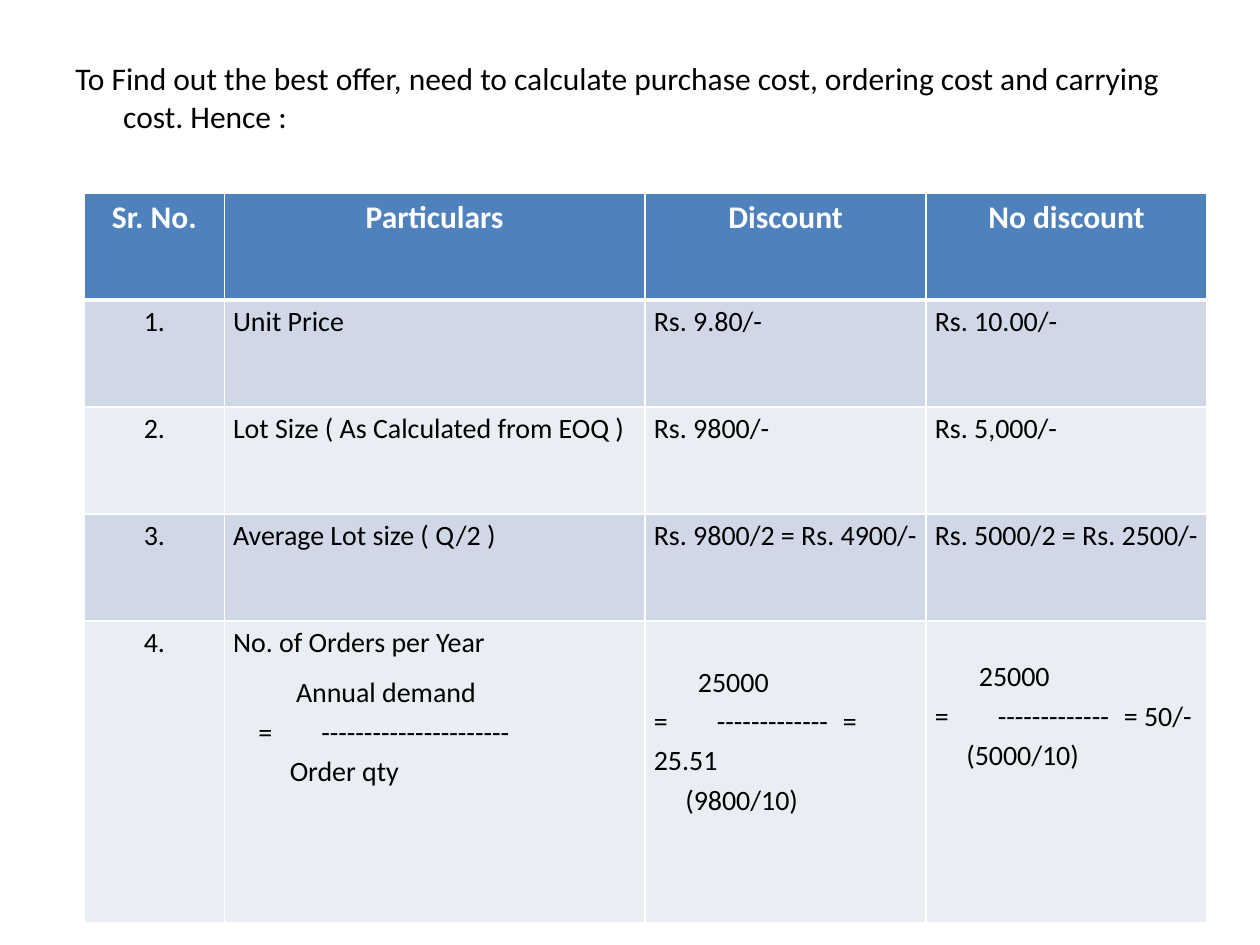
from typing import Any, NamedTuple

from lxml import etree
from pptx import Presentation
from pptx import util as u
from pptx.dml.color import RGBColor
from pptx.enum import text
from pptx.oxml import ns

COLORS = {
    "header": "4F81BD",
    "odd": "D0D8E8",
    "even": "E9EDF4",
    "light": "FFFFFF",
    "dark": "000000",
}
LEFT, CENTER = text.PP_ALIGN.LEFT, text.PP_ALIGN.CENTER
COL_WIDTHS = (1.11, 3.34, 2.23, 2.23)
ROW_HEIGHTS = (0.85, 0.85, 0.85, 0.85, 2.39)


class Line(NamedTuple):
    text: str
    indent: float = 0
    tabs: tuple[float, ...] = ()
    after: float = 0


class Entry(NamedTuple):
    lines: tuple[Line, ...]
    top: float = 0


def single(words: str) -> Entry:
    return Entry((Line(words),))


def orders(divisor: str, result: str, top: float) -> Entry:
    """Number of orders as a fraction over three lines."""
    return Entry((
        Line("25000", 0.35),
        Line(f"=\t-------------\t= {result}", 0, (0.21, 1.34)),
        Line(f"({divisor}/10)", 0.25),
    ), top)


HEADER = ("Sr. No.", "Particulars", "Discount", "No discount")
PRICES = (
    ("1.", "Unit Price", "Rs. 9.80/-", "Rs. 10.00/-"),
    ("2.", "Lot Size ( As Calculated from EOQ )", "Rs. 9800/-", "Rs. 5,000/-"),
    ("3.", "Average Lot size ( Q/2 )", "Rs. 9800/2 = Rs. 4900/-",
     "Rs. 5000/2 = Rs. 2500/-"),
)
ORDERS = (
    single("4."),
    Entry((
        Line("No. of Orders per Year", after=6),
        Line("Annual demand", 0.5),
        Line("=\t----------------------", 0.2, (0.41,)),
        Line("Order qty", 0.45),
    )),
    orders("9800", "25.51", 0.31),
    orders("5000", "50/-", 0.27),
)
ROWS = [tuple(map(single, row)) for row in (HEADER, *PRICES)] + [ORDERS]


def set_attrs(obj: Any, values: dict[str, Any]) -> None:
    for name, value in values.items():
        setattr(obj, name, value)


def add_run(p: Any, words: str, size: float, color: str, bold: bool) -> None:
    r = p.add_run()
    r.text = words
    set_attrs(r.font, {"name": "Calibri", "size": u.Pt(size), "bold": bold})
    r.font.color.rgb = RGBColor.from_string(COLORS[color])


def set_indent(p: Any, left: float, first: float = 0) -> None:
    pPr = p._p.get_or_add_pPr()
    pPr.set("marL", str(u.Inches(left)))
    pPr.set("indent", str(u.Inches(first)))


def add_tabs(p: Any, stops: tuple[float, ...]) -> None:
    tabs = etree.SubElement(p._p.get_or_add_pPr(), ns.qn("a:tabLst"))
    for stop in stops:
        etree.SubElement(tabs, ns.qn("a:tab"), pos=str(u.Inches(stop)), algn="l")


def set_borders(cell: Any, widths: dict[str, float]) -> None:
    """Draw light cell edges; the keys of widths are L, R, T and B, in that order."""
    tcPr = cell._tc.get_or_add_tcPr()
    for i, (side, width) in enumerate(widths.items()):
        ln = etree.Element(ns.qn(f"a:ln{side}"), w=str(u.Pt(width)))
        fill = etree.SubElement(ln, ns.qn("a:solidFill"))
        etree.SubElement(fill, ns.qn("a:srgbClr"), val=COLORS["light"])
        tcPr.insert(i, ln)


def fill_cell(cell: Any, entry: Entry, row: int, col: int) -> None:
    header = row == 0
    set_attrs(cell, {
        "margin_left": u.Inches(0.07), "margin_right": u.Inches(0.07),
        "margin_top": u.Inches(entry.top), "margin_bottom": 0,
    })
    cell.fill.solid()
    band = "header" if header else ("odd" if row % 2 else "even")
    cell.fill.fore_color.rgb = RGBColor.from_string(COLORS[band])
    set_borders(cell, {"L": 1, "R": 1, "T": 3 if row == 1 else 1,
                       "B": 3 if header else 1})
    tf = cell.text_frame
    for i, line in enumerate(entry.lines):
        p = tf.add_paragraph() if i else tf.paragraphs[0]
        set_attrs(p, {
            "alignment": CENTER if header or col == 0 else LEFT,
            "line_spacing": 1.15,
            "space_before": u.Pt(6 if header else 0),
            "space_after": u.Pt(6 if header else line.after),
        })
        set_indent(p, line.indent)
        if line.tabs:
            add_tabs(p, line.tabs)
        add_run(p, line.text, 18 if header else 16,
                "light" if header else "dark", header)


def add_intro(s: Any) -> None:
    sp = s.shapes.add_textbox(*map(u.Inches, (0.5, 0.42, 9, 6.28)))
    tf = sp.text_frame
    tf.word_wrap = True
    p = tf.paragraphs[0]
    set_indent(p, 0.38, -0.38)
    add_run(p, "To Find out the best offer, need to calculate purchase cost, "
               "ordering cost and carrying cost. Hence :", 18, "dark", False)


def add_cost_table(s: Any) -> None:
    table = s.shapes.add_table(
        len(ROWS), len(COL_WIDTHS), u.Inches(0.67), u.Inches(1.53),
        u.Inches(sum(COL_WIDTHS)), u.Inches(sum(ROW_HEIGHTS))).table
    for column, width in zip(table.columns, COL_WIDTHS):
        column.width = u.Inches(width)
    for row, height in zip(table.rows, ROW_HEIGHTS):
        row.height = u.Inches(height)
    for i, entries in enumerate(ROWS):
        for j, entry in enumerate(entries):
            fill_cell(table.cell(i, j), entry, i, j)


def main() -> None:
    prs = Presentation()
    set_attrs(prs, {"slide_width": u.Inches(10), "slide_height": u.Inches(7.5)})
    s = prs.slides.add_slide(prs.slide_layouts[6])
    add_intro(s)
    add_cost_table(s)
    prs.save("out.pptx")


if __name__ == "__main__":
    main()
